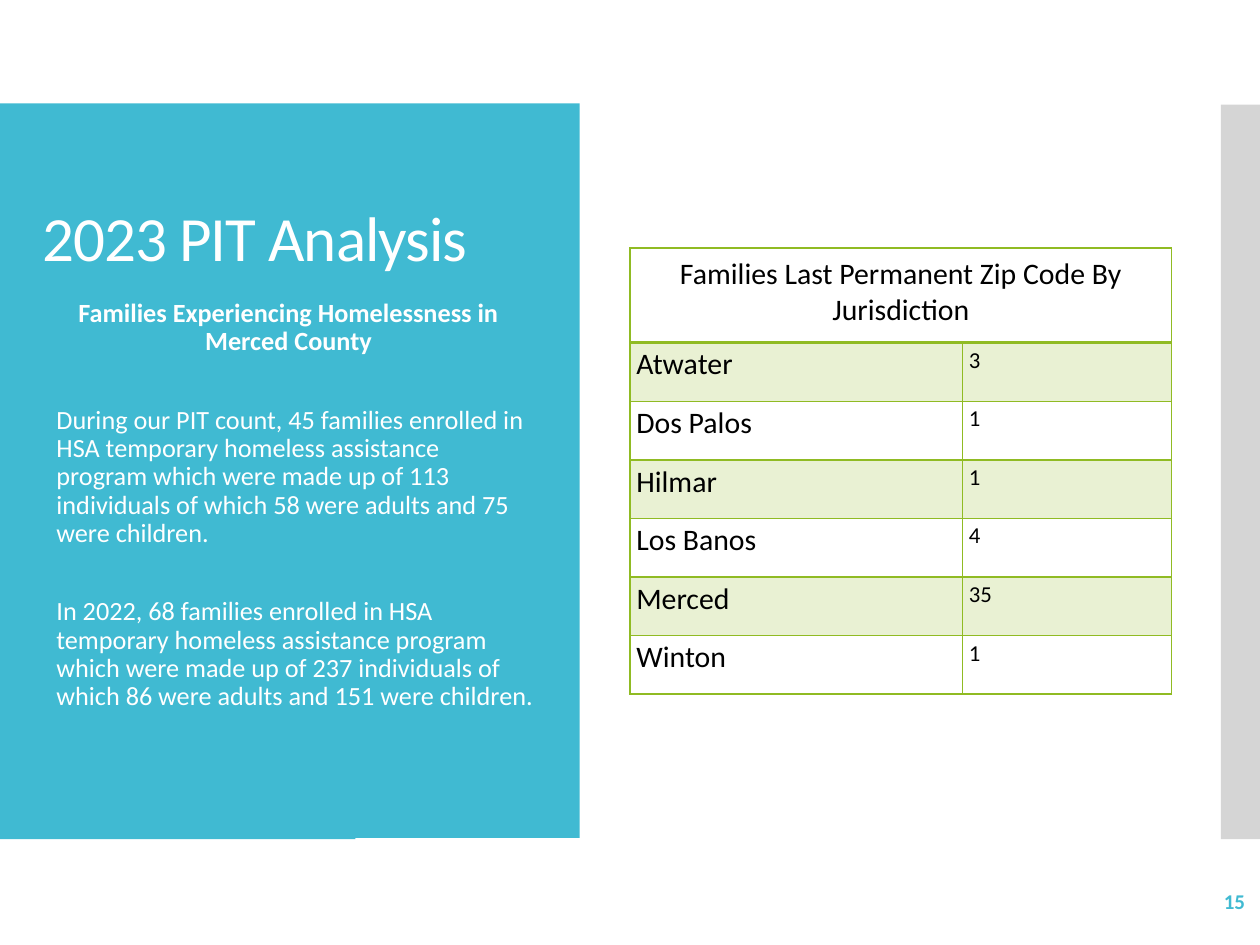
"""Build the 2023 PIT Analysis slide on families experiencing homelessness."""
from lxml.etree import SubElement
from pptx import Presentation
from pptx.dml.color import RGBColor
from pptx.enum.shapes import MSO_SHAPE as Shape
from pptx.enum.text import MSO_ANCHOR as Anchor, PP_ALIGN as Align
from pptx.oxml.ns import qn
from pptx.util import Inches, Pt

COLORS = {"teal": "40BAD2", "gray": "D5D5D5", "green": "90BB23",
          "pale": "E9F1D3", "white": "FFFFFF", "black": "000000"}
FONT = "Calibri"
TITLE = "2023 PIT Analysis"
SUBTITLE = "Families Experiencing Homelessness in Merced County"
FINDINGS = [
    "During our PIT count, 45 families enrolled in HSA temporary homeless "
    "assistance program which were made up of 113 individuals of which 58 "
    "were adults and 75 were children.",
    "In 2022, 68 families enrolled in HSA temporary homeless assistance "
    "program which were made up of 237 individuals of which 86 were adults "
    "and 151 were children.",
]
PAGE = "15"
TABLE_HEADING = "Families Last Permanent Zip Code By Jurisdiction"
FAMILIES = [("Atwater", 3), ("Dos Palos", 1), ("Hilmar", 1),
            ("Los Banos", 4), ("Merced", 35), ("Winton", 1)]
PANELS = [((0, 0.83, 2.82, 5.83), "teal"), ((0, 0.82, 4.6, 5.83), "teal"),
          ((9.69, 0.83, 0.31, 5.83), "gray")]
COLUMN_WIDTHS = (2.64, 1.66)
HEADING_HEIGHT, ROW_HEIGHT = 0.75, 0.465


def rgb(name):
    return RGBColor.from_string(COLORS[name])


def write(paragraph, text, size, color, bold=False, align=Align.LEFT):
    paragraph.text = text
    paragraph.alignment = align
    font = paragraph.font
    font.name, font.size, font.bold = FONT, Pt(size), bold
    font.color.rgb = rgb(color)


def add_frame(slide, box, anchor=Anchor.TOP):
    frame = slide.shapes.add_textbox(*map(Inches, box)).text_frame
    frame.word_wrap = True
    frame.vertical_anchor = anchor
    return frame


def add_panel(slide, box, color):
    panel = slide.shapes.add_shape(Shape.RECTANGLE, *map(Inches, box))
    panel.shadow.inherit = False
    panel.fill.solid()
    panel.fill.fore_color.rgb = rgb(color)
    panel.line.fill.background()


def add_borders(cell, bottom):
    properties = cell._tc.get_or_add_tcPr()
    widths = {"a:lnL": 1, "a:lnR": 1, "a:lnT": 1, "a:lnB": bottom}
    for position, (side, width) in enumerate(widths.items()):
        border = SubElement(properties, qn(side), w=str(Pt(width)))
        fill = SubElement(border, qn("a:solidFill"))
        SubElement(fill, qn("a:srgbClr"), val=COLORS["green"])
        properties.insert(position, border)


def fill_cell(cell, text, size, align=Align.LEFT, shade=None, bottom=1):
    cell.margin_left = cell.margin_right = Inches(0.05)
    cell.margin_top, cell.margin_bottom = Inches(0.03), Inches(0.11)
    write(cell.text_frame.paragraphs[0], text, size, "black", align=align)
    if shade:
        cell.fill.solid()
        cell.fill.fore_color.rgb = rgb(shade)
    else:
        cell.fill.background()
    add_borders(cell, bottom)


def add_family_table(slide):
    height = HEADING_HEIGHT + ROW_HEIGHT * len(FAMILIES)
    box = map(Inches, (5, 1.97, sum(COLUMN_WIDTHS), height))
    table = slide.shapes.add_table(len(FAMILIES) + 1, 2, *box).table
    table.first_row = table.horz_banding = False
    for column, width in zip(table.columns, COLUMN_WIDTHS):
        column.width = Inches(width)
    for index, row in enumerate(table.rows):
        row.height = Inches(ROW_HEIGHT if index else HEADING_HEIGHT)

    heading = table.cell(0, 0)
    heading.merge(table.cell(0, 1))
    heading.vertical_anchor = Anchor.BOTTOM
    fill_cell(heading, TABLE_HEADING, 17, Align.CENTER, bottom=2)
    add_borders(table.cell(0, 1), bottom=2)
    for index, (city, count) in enumerate(FAMILIES, 1):
        shade = "pale" if index % 2 else None
        fill_cell(table.cell(index, 0), city, 17, shade=shade)
        fill_cell(table.cell(index, 1), str(count), 13, shade=shade)


def add_summary(slide):
    title = add_frame(slide, (0.24, 1.23, 4.1, 1.37), Anchor.MIDDLE).paragraphs[0]
    write(title, TITLE, 36, "white")
    title.line_spacing = 0.9
    title.runs[0]._r.get_or_add_rPr().set("spc", "-60")

    body = add_frame(slide, (0.24, 2.33, 4.1, 3.83))
    write(body.paragraphs[0], SUBTITLE, 15, "white", True, Align.CENTER)
    for finding in FINDINGS:
        paragraph = body.add_paragraph()
        write(paragraph, finding, 15, "white")
        paragraph.space_before = Pt(22.5)
        paragraph._p.get_or_add_pPr().set("marL", str(Inches(0.11)))
    for paragraph in body.paragraphs:
        paragraph.line_spacing = 0.9
        paragraph.space_after = Pt(6)


def main():
    deck = Presentation()
    deck.slide_width, deck.slide_height = Inches(10), Inches(7.5)
    slide = deck.slides.add_slide(deck.slide_layouts[6])
    for box, color in PANELS:
        add_panel(slide, box, color)
    add_summary(slide)
    page = add_frame(slide, (8.72, 6.95, 1.26, 0.4), Anchor.MIDDLE)
    write(page.paragraphs[0], PAGE, 12, "teal", True, Align.RIGHT)
    add_family_table(slide)
    deck.save("out.pptx")


if __name__ == "__main__":
    main()
